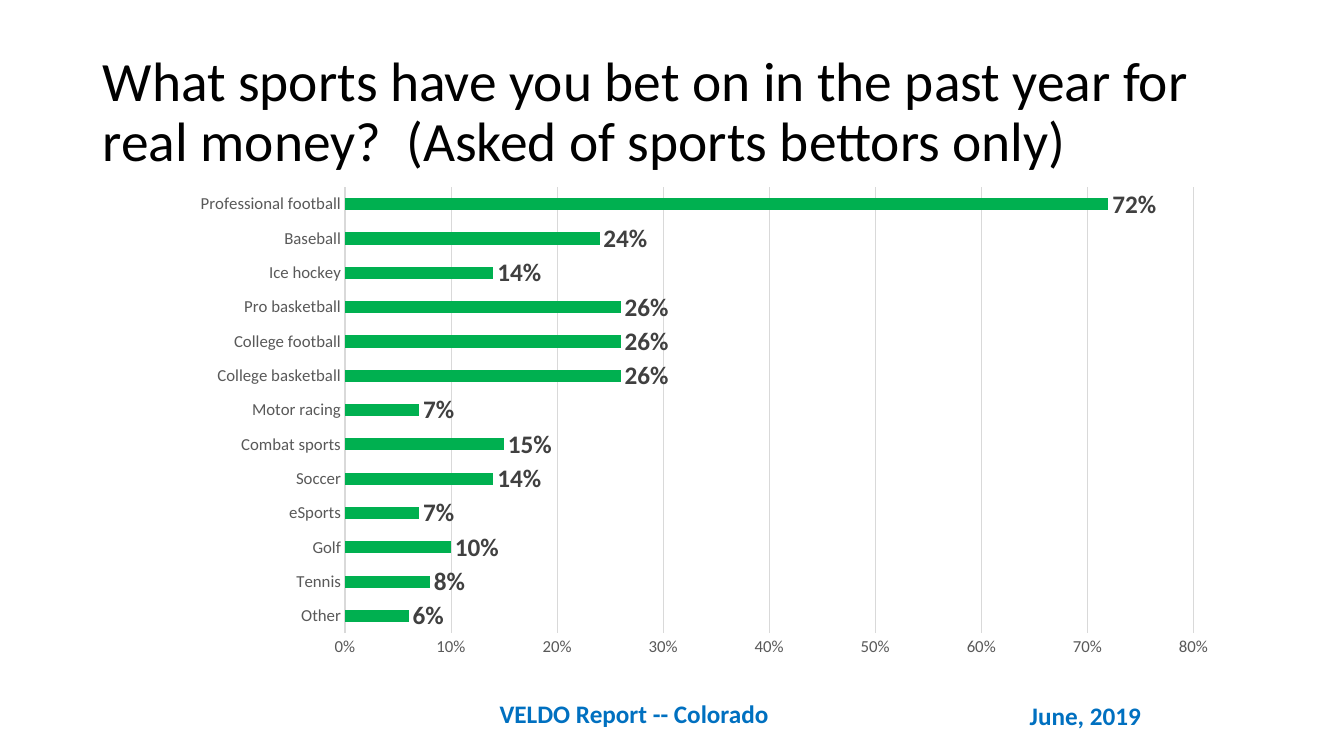
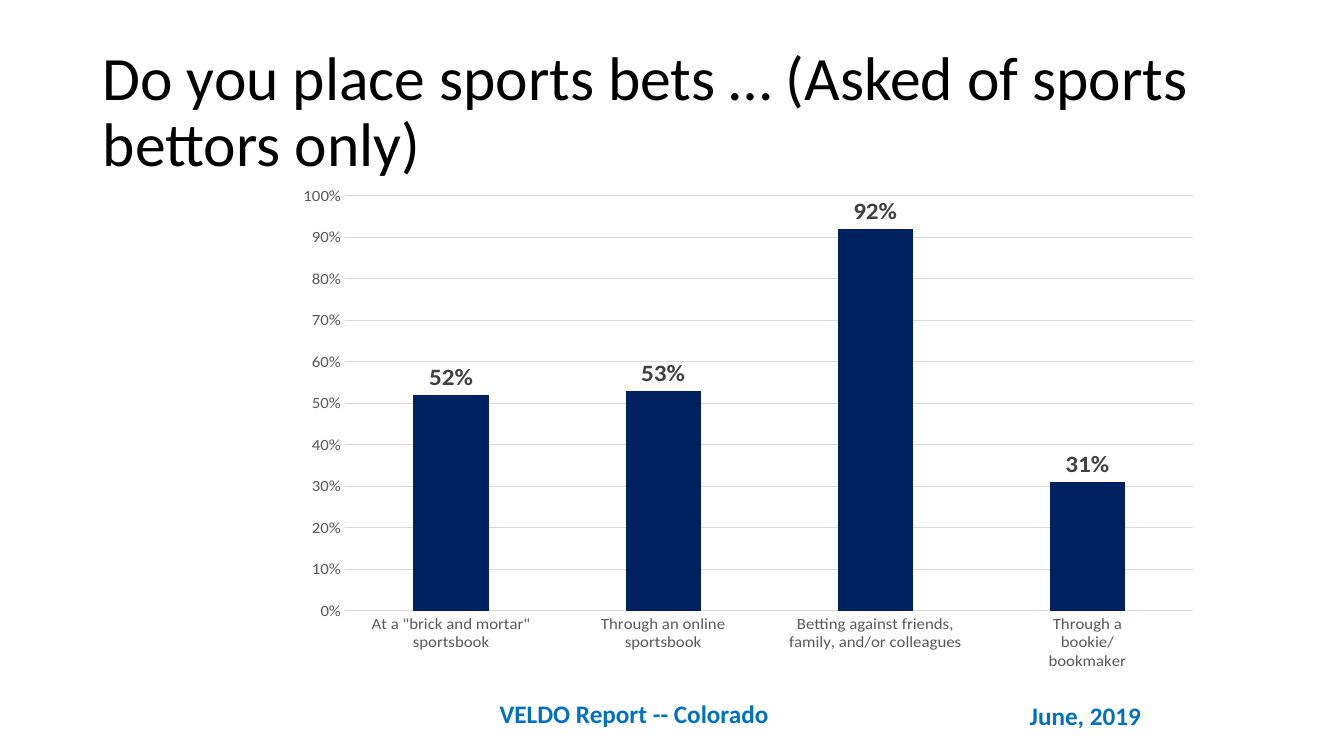
from dataclasses import dataclass

import pptx
import pptx.chart.data
import pptx.dml.color
import pptx.enum.chart
import pptx.enum.text
import pptx.util
from lxml import etree

# Shared look
Cm = pptx.util.Cm
FONT = "Calibri"
COLORS = {
    "title": "000000",
    "footer": "0070C0",
    "axis": "595959",
    "grid": "D9D9D9",
    "value": "404040",
    "sports": "00B050",
    "channels": "002060",
}
PLOT_AREA = {"x": 0.248, "y": 0.001, "w": 0.732, "h": 0.93}
BAR = pptx.enum.chart.XL_CHART_TYPE.BAR_CLUSTERED
COLUMN = pptx.enum.chart.XL_CHART_TYPE.COLUMN_CLUSTERED


@dataclass(frozen=True)
class Box:
    left: float
    top: float
    width: float
    height: float

    def lengths(self) -> tuple[int, ...]:
        return Cm(self.left), Cm(self.top), Cm(self.width), Cm(self.height)


@dataclass(frozen=True)
class Footer:
    text: str
    box: Box


@dataclass(frozen=True)
class Question:
    title: str
    title_size: float
    chart_type: int
    color: str
    axis_max: float
    answers: dict[str, float]


TITLE_BOX = Box(2.34, 1.02, 29.21, 3.68)
CHART_BOX = Box(1.45, 4.7, 29.21, 12.09)
FOOTERS = (
    Footer("June, 2019", Box(25.7, 17.53, 3.63, 1.02)),
    Footer("VELDO Report -- Colorado", Box(12.34, 17.48, 9.14, 1.02)),
)

# Survey content; bars run from the bottom up
QUESTIONS = (
    Question(
        "What sports have you bet on in the past year for real money?  (Asked of sports bettors only)",
        39.6, BAR, "sports", 0.8,
        {
            "Other": 0.06,
            "Tennis": 0.08,
            "Golf": 0.1,
            "eSports": 0.07,
            "Soccer": 0.14,
            "Combat sports": 0.15,
            "Motor racing": 0.07,
            "College basketball": 0.26,
            "College football": 0.26,
            "Pro basketball": 0.26,
            "Ice hockey": 0.14,
            "Baseball": 0.24,
            "Professional football": 0.72,
        },
    ),
    Question(
        "Do you place sports bets … (Asked of sports bettors only)",
        44, COLUMN, "channels", 1,
        {
            'At a "brick and mortar" sportsbook': 0.52,
            "Through an online sportsbook": 0.53,
            "Betting against friends, family, and/or colleagues": 0.92,
            "Through a bookie/bookmaker": 0.31,
        },
    ),
)


def rgb(name: str) -> pptx.dml.color.RGBColor:
    return pptx.dml.color.RGBColor.from_string(COLORS[name])


def style_font(font, size: float, color: str, bold: bool = False) -> None:
    font.name = FONT
    font.size = pptx.util.Pt(size)
    font.bold = bold
    font.color.rgb = rgb(color)


def add_text(slide, text: str, box: Box, *, size: float, color: str,
             bold: bool = False, middle: bool = False, spacing: float = 1.0) -> None:
    frame = slide.shapes.add_textbox(*box.lengths()).text_frame
    frame.word_wrap = True
    anchors = pptx.enum.text.MSO_ANCHOR
    frame.vertical_anchor = anchors.MIDDLE if middle else anchors.TOP
    paragraph = frame.paragraphs[0]
    paragraph.line_spacing = spacing
    run = paragraph.add_run()
    run.text = text
    style_font(run.font, size, color, bold)


def style_line(line, color: str) -> None:
    line.color.rgb = rgb(color)
    line.width = pptx.util.Pt(0.75)


def fix_plot_area(chart) -> None:
    """Give the inner plot area a fixed place within the chart."""
    plot_area = chart._chartSpace.chart.plotArea
    namespace = "{%s}" % plot_area.nsmap["c"]
    for automatic in plot_area.findall(namespace + "layout"):
        plot_area.remove(automatic)
    layout = etree.Element(namespace + "layout")
    plot_area.insert(0, layout)
    manual = etree.SubElement(layout, namespace + "manualLayout")
    settings = {"layoutTarget": "inner", "xMode": "edge", "yMode": "edge", **PLOT_AREA}
    for tag, value in settings.items():
        etree.SubElement(manual, namespace + tag, val=str(value))


def add_answers(slide, question: Question) -> None:
    data = pptx.chart.data.CategoryChartData(number_format="0%")
    data.categories = list(question.answers)
    data.add_series("Series 1", list(question.answers.values()))
    chart = slide.shapes.add_chart(question.chart_type, *CHART_BOX.lengths(), data).chart
    chart.has_title = False
    chart.has_legend = False
    style_font(chart.font, 10, "title")
    fix_plot_area(chart)

    # Axes
    for axis in (chart.category_axis, chart.value_axis):
        axis.major_tick_mark = pptx.enum.chart.XL_TICK_MARK.NONE
        axis.minor_tick_mark = pptx.enum.chart.XL_TICK_MARK.NONE
        style_font(axis.tick_labels.font, 12, "axis")
    style_line(chart.category_axis.format.line, "grid")
    percent = chart.value_axis
    percent.minimum_scale = 0
    percent.maximum_scale = question.axis_max
    percent.major_unit = 0.1
    percent.tick_labels.number_format = "0%"
    percent.tick_labels.number_format_is_linked = False
    percent.format.line.fill.background()
    percent.has_major_gridlines = True
    style_line(percent.major_gridlines.format.line, "grid")

    # Bars and their values
    plot = chart.plots[0]
    plot.gap_width = 182
    plot.vary_by_categories = False
    bars = plot.series[0]
    bars.format.fill.solid()
    bars.format.fill.fore_color.rgb = rgb(question.color)
    labels = bars.data_labels
    labels.show_value = True
    labels.number_format = "0%"
    labels.number_format_is_linked = False
    labels.position = pptx.enum.chart.XL_LABEL_POSITION.OUTSIDE_END
    style_font(labels.font, 18, "value", bold=True)


def main() -> None:
    deck = pptx.Presentation()
    deck.slide_width, deck.slide_height = Cm(33.87), Cm(19.05)
    blank = deck.slide_layouts[6]
    for question in QUESTIONS:
        slide = deck.slides.add_slide(blank)
        for footer in FOOTERS:
            add_text(slide, footer.text, footer.box, size=18, color="footer", bold=True)
        add_text(slide, question.title, TITLE_BOX, size=question.title_size,
                 color="title", middle=True, spacing=0.9)
        add_answers(slide, question)
    deck.save("out.pptx")


if __name__ == "__main__":
    main()
